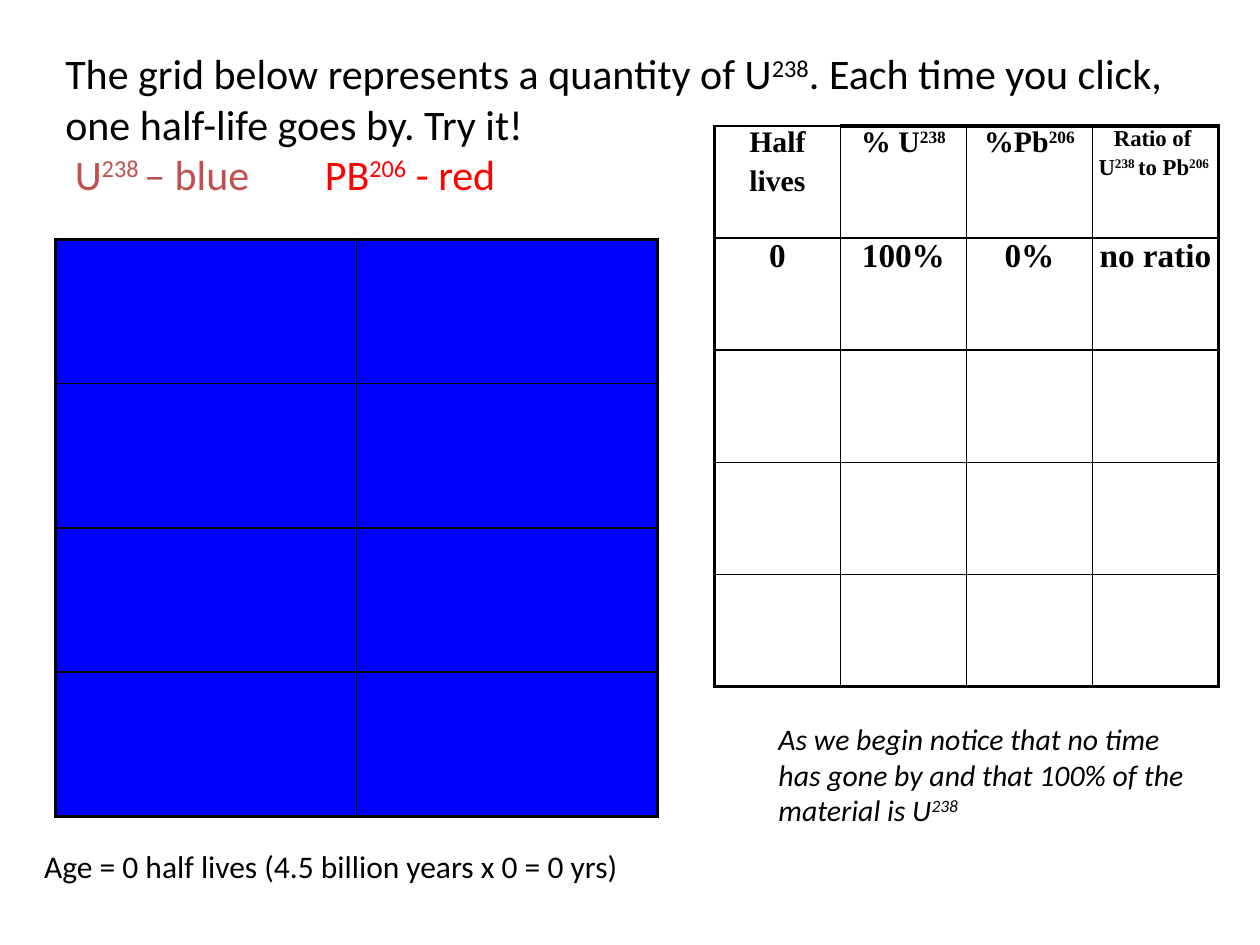
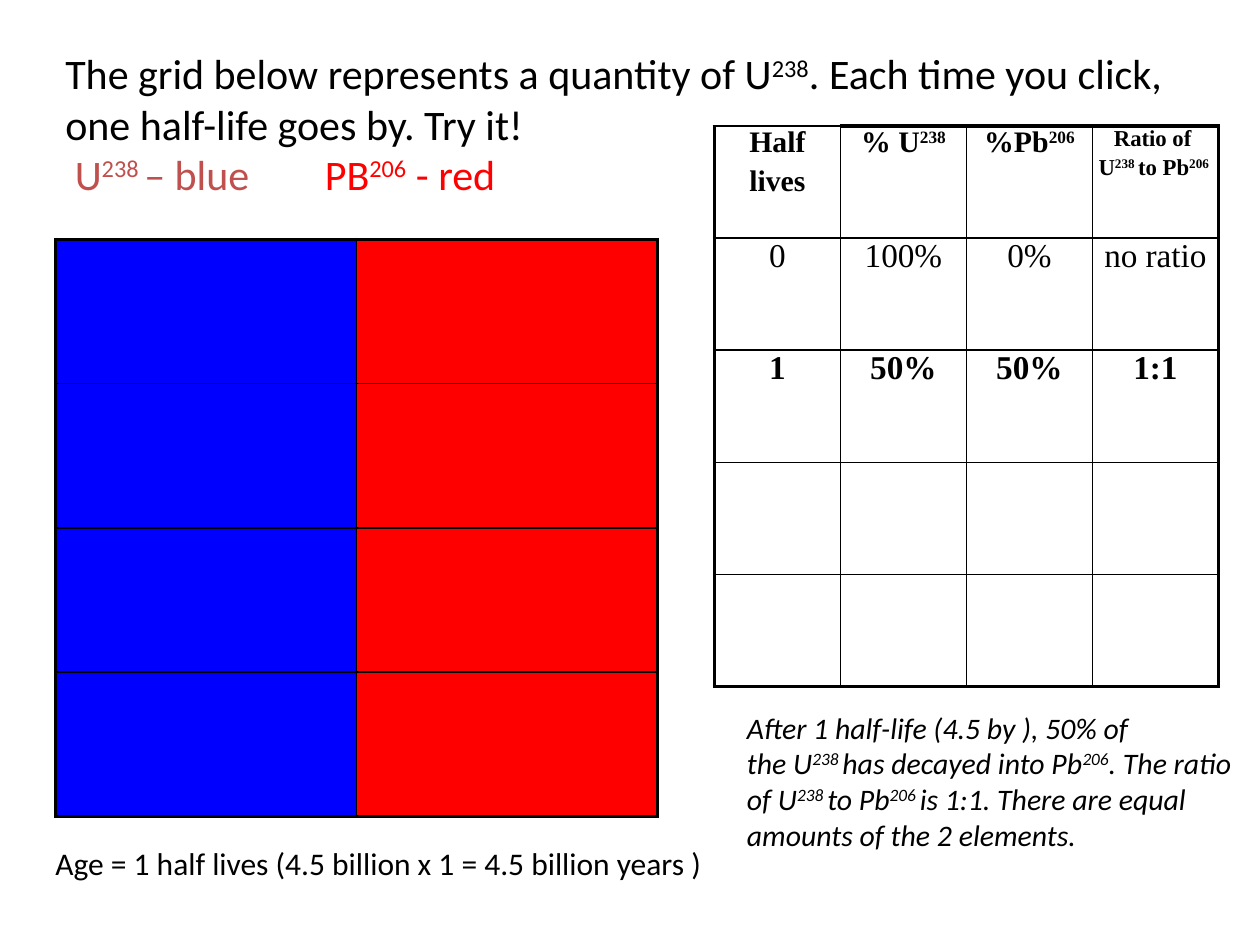
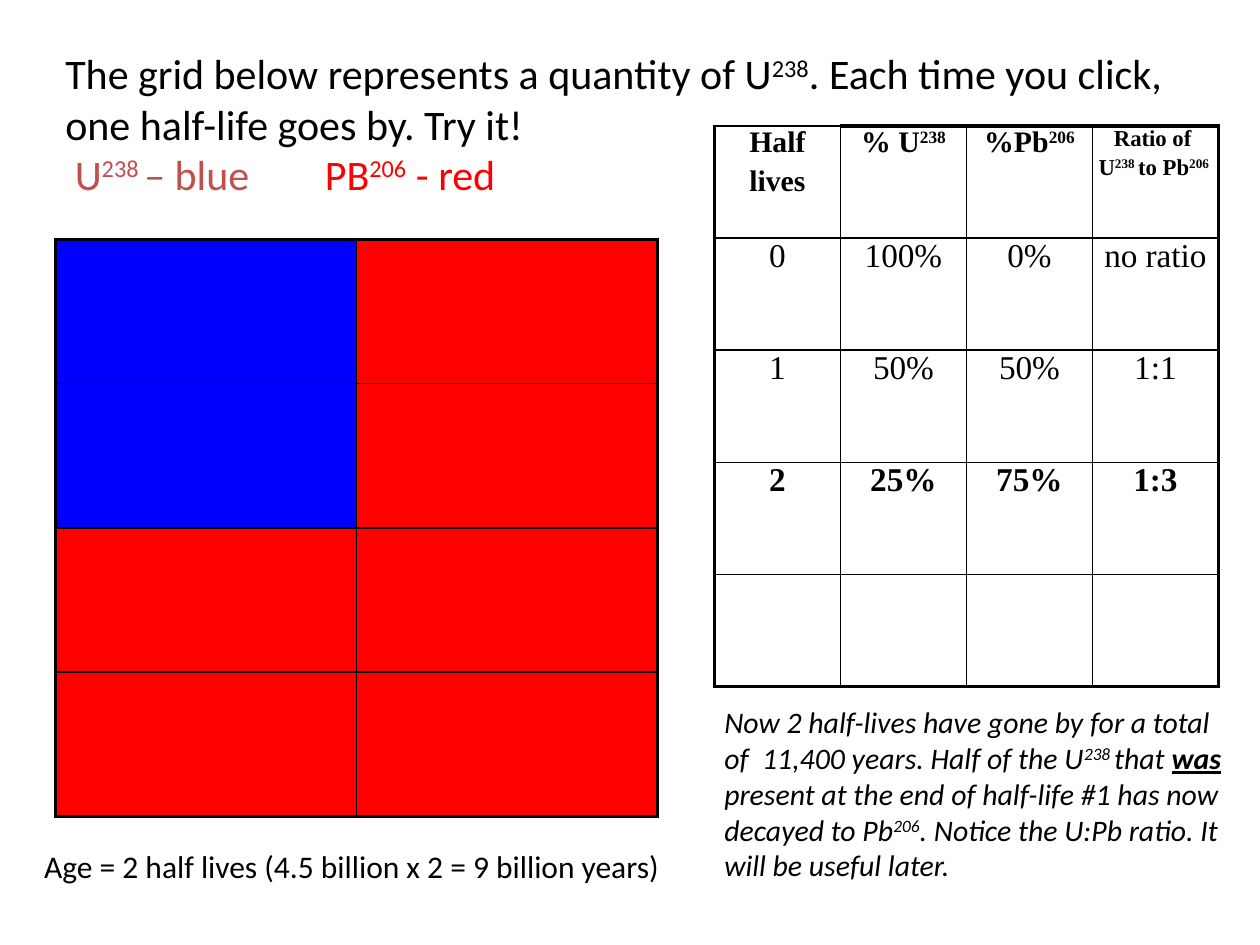
from itertools import product

from lxml import etree
from pptx import Presentation
from pptx.dml.color import RGBColor
from pptx.enum import text
from pptx.oxml import ns
from pptx.util import Inches, Pt

BLACK, BLUE, RED, BRICK = "000000", "0000FF", "FF0000", "C0504D"
BODY, TABULAR = "Calibri", "Times New Roman"
THICK, THIN = 2.25, 1

HEADINGS = (
    (("Half", "lives"), 17),
    (("% U^238^",), 17),
    (("%Pb^206^",), 17),
    (("Ratio of ", "U^238 ^to Pb^206 ^"), 13),
)
RATIOS = (
    ("0", "100%", "0%", "no ratio"),
    ("1", "50%", "50%", "1:1"),
    ("2", "25%", "75%", "1:3"),
)
STAGES = (
    {
        "title_width": 9.2,
        "note_place": (6.08, 5.67, 3.45, 0.96),
        "note": (
            "As we begin notice that no time",
            "has gone by and that 100% of the",
            "material is U^238^",
        ),
        "age_place": (0.22, 6.65, 4.88, 0.44),
        "age": "Age = 0 half lives (4.5 billion years x 0 = 0 yrs)",
    },
    {
        "title_width": 9.04,
        "note_place": (5.83, 5.58, 4.17, 1.25),
        "note": (
            "After 1 half-life (4.5 by ), 50% of",
            "the U^238 ^has decayed into Pb^206^. The ratio",
            "of U^238 ^to Pb^206 ^is 1:1. There are equal",
            "amounts of the 2 elements.",
        ),
        "age_place": (0.31, 6.63, 5.46, 0.44),
        "age": "Age = 1 half lives (4.5 billion x 1 = 4.5 billion years )",
    },
    {
        "title_width": 9.04,
        "note_place": (5.65, 5.54, 4.24, 1.53),
        "note": (
            "Now 2 half-lives have gone by for a total",
            "of  11,400 years. Half of the U^238 ^that *was*",
            "present at the end of half-life #1 has now",
            "decayed to Pb^206^. Notice the U:Pb ratio. It",
            "will be useful later.",
        ),
        "age_place": (0.22, 6.65, 5.21, 0.44),
        "age": "Age = 2 half lives (4.5 billion x 2 = 9 billion years)",
    },
)


def rgb(value):
    return RGBColor.from_string(value)


class HalfLifeDeck:
    def __init__(self):
        self.deck = Presentation()
        self.deck.slide_width = Inches(10)
        self.deck.slide_height = Inches(7.5)
        self.page = None

    def add_page(self):
        self.page = self.deck.slides.add_slide(self.deck.slide_layouts[6])

    def add_spans(self, para, markup, colour=None):
        for index, part in enumerate(markup.split("^")):
            for stress, words in enumerate(part.split("*")):
                if not words:
                    continue
                span = para.add_run()
                span.text = words
                if index % 2:
                    span.font._element.set("baseline", "30000")
                if stress % 2:
                    span.font.bold = span.font.underline = True
                if colour:
                    span.font.color.rgb = rgb(colour)

    def paragraphs(self, frame, lines, size, name=BODY, bold=None, italic=None):
        for index, line in enumerate(lines):
            para = frame.paragraphs[0] if index == 0 else frame.add_paragraph()
            para.font.name = name
            para.font.size = Pt(size)
            para.font.color.rgb = rgb(BLACK)
            para.font.bold = bold
            para.font.italic = italic
            self.add_spans(para, line)

    def text(self, place, lines, size, inset=(0.1, 0.05), italic=None):
        box = self.page.shapes.add_textbox(*map(Inches, place))
        frame = box.text_frame
        frame.word_wrap = False
        frame.auto_size = text.MSO_AUTO_SIZE.SHAPE_TO_FIT_TEXT
        frame.margin_left = frame.margin_right = Inches(inset[0])
        frame.margin_top = frame.margin_bottom = Inches(inset[1])
        self.paragraphs(frame, lines, size, italic=italic)
        return frame

    def title(self, width):
        lines = (
            "The grid below represents a quantity of U^238^. Each time you click,",
            "one half-life goes by. Try it!",
        )
        frame = self.text((0.42, 0.33, width, 1.31), lines, 24)
        legend = frame.add_paragraph()
        legend.font.name = BODY
        legend.font.size = Pt(24)
        self.add_spans(legend, " U^238 ^– blue", BRICK)
        self.add_spans(legend, "\tPB^206^ - red", RED)
        stops = etree.Element(ns.qn("a:tabLst"))
        etree.SubElement(stops, ns.qn("a:tab"), pos=str(Inches(2.06)), algn="l")
        legend._p.pPr.insert(0, stops)

    def border(self, cell, side, width):
        line = etree.SubElement(
            cell._tc.get_or_add_tcPr(), ns.qn(f"a:ln{side}"), w=str(Pt(width))
        )
        fill = etree.SubElement(line, ns.qn("a:solidFill"))
        etree.SubElement(fill, ns.qn("a:srgbClr"), val=BLACK)

    def table(self, place, rows, columns, corner_top=THICK):
        frame = self.page.shapes.add_table(rows, columns, *map(Inches, place))
        table = frame.table
        table.first_row = table.horz_banding = False
        for row, column in product(range(rows), range(columns)):
            cell = table.cell(row, column)
            edges = {
                "L": column == 0,
                "R": column == columns - 1,
                "T": row == 0,
                "B": row == rows - 1,
            }
            for side, outer in edges.items():
                width = THICK if outer else THIN
                if side == "T" and row == column == 0:
                    width = corner_top
                self.border(cell, side, width)
            cell.fill.background()
        return table

    def cell_text(self, cell, lines, size, bold):
        cell.margin_left = cell.margin_right = 0
        cell.margin_top = cell.margin_bottom = 0
        self.paragraphs(cell.text_frame, lines, size, TABULAR, bold=bold)
        for para in cell.text_frame.paragraphs:
            para.alignment = text.PP_ALIGN.CENTER
            para.space_before = Pt(size * 0.2)

    def ratio_table(self, elapsed):
        table = self.table((5.67, 1, 4, 4.45), 5, 4, corner_top=THIN)
        for column, (lines, size) in enumerate(HEADINGS):
            self.cell_text(table.cell(0, column), lines, size, True)
        for age, values in enumerate(RATIOS[: elapsed + 1]):
            for column, value in enumerate(values):
                cell = table.cell(age + 1, column)
                self.cell_text(cell, (value,), 19, age == elapsed)

    def decay_grid(self, elapsed):
        rows, columns = 4, 2
        table = self.table((0.44, 1.9, 4.78, 4.58), rows, columns)
        uranium_cells = rows * columns // 2**elapsed
        for column, row in product(range(columns), range(rows)):
            fill = table.cell(row, column).fill
            fill.solid()
            is_uranium = column * rows + row < uranium_cells
            fill.fore_color.rgb = rgb(BLUE if is_uranium else RED)


def main():
    builder = HalfLifeDeck()
    for elapsed, stage in enumerate(STAGES):
        builder.add_page()
        builder.title(stage["title_width"])
        builder.ratio_table(elapsed)
        builder.text(stage["note_place"], stage["note"], 17, italic=True)
        builder.decay_grid(elapsed)
        builder.text(stage["age_place"], (stage["age"],), 18, inset=(0.13, 0.07))
    builder.deck.save("out.pptx")


if __name__ == "__main__":
    main()
